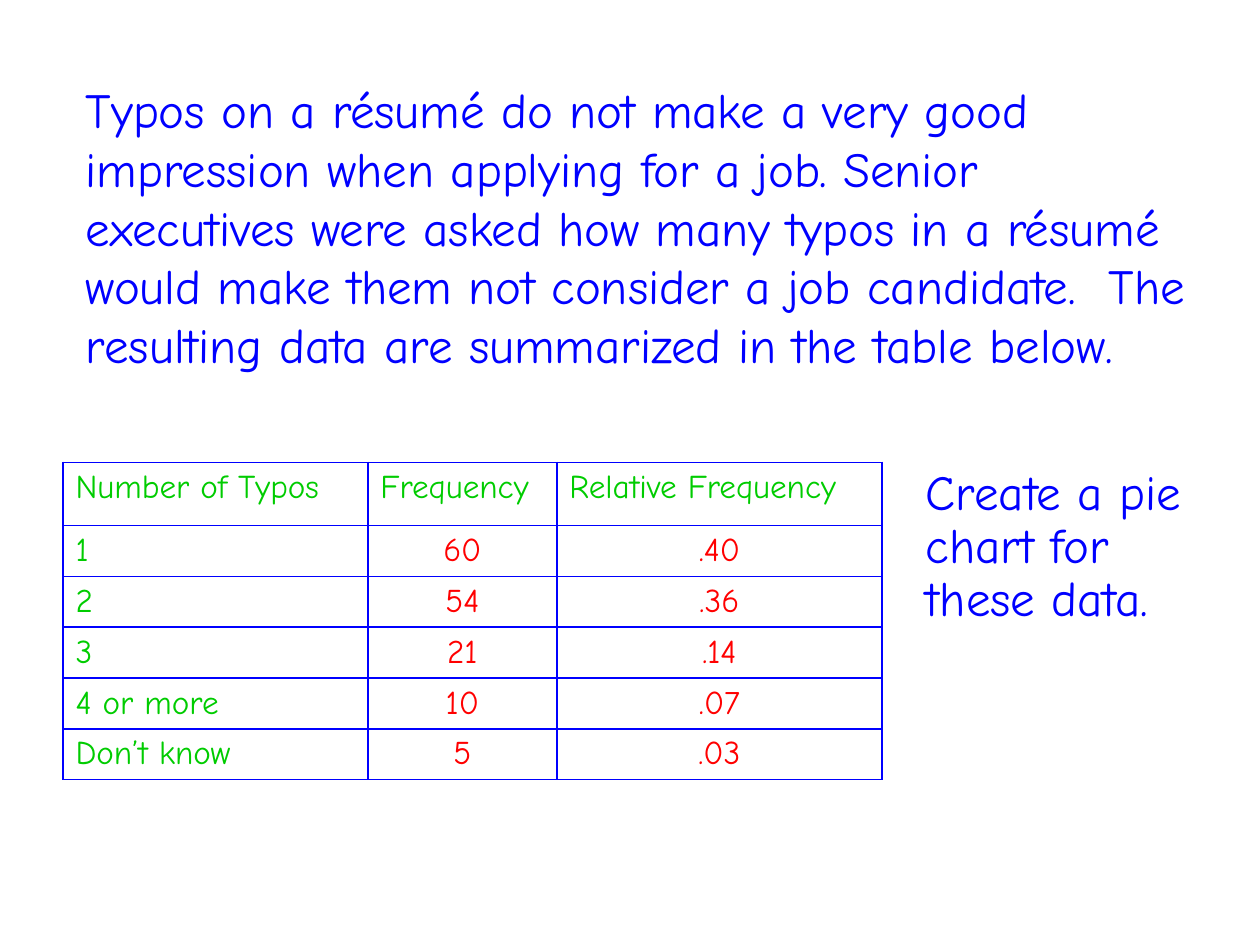
import pptx
import pptx.dml.color
import pptx.enum.text
import pptx.oxml
import pptx.oxml.ns
import pptx.util

Inches = pptx.util.Inches
Pt = pptx.util.Pt

THEME = {
    "font": "Comic Neue",
    "prose": "0000FF",
    "label": "00CC00",
    "value": "FF0000",
    "grid": "0000FF",
    "prose_size": 28,
    "table_size": 19,
}


def write(paragraph, text, size, color):
    run = paragraph.add_run()
    run.text = text
    run.font.name = THEME["font"]
    run.font.size = Pt(THEME[size])
    run.font.color.rgb = pptx.dml.color.RGBColor.from_string(THEME[color])
    paragraph.space_before = Pt(0)


def outline(cell):
    """Draw a one-point line on all four sides of a table cell."""
    properties = cell._tc.get_or_add_tcPr()
    for position, side in enumerate(("lnL", "lnR", "lnT", "lnB")):
        line = pptx.oxml.parse_xml(
            f'<a:{side} {pptx.oxml.ns.nsdecls("a")} w="{Pt(1)}"><a:solidFill>'
            f'<a:srgbClr val="{THEME["grid"]}"/></a:solidFill></a:{side}>'
        )
        properties.insert(position, line)


deck = pptx.Presentation()
deck.slide_width, deck.slide_height = Inches(10), Inches(7.5)
slide = deck.slides.add_slide(deck.slide_layouts[1])
empty_title = slide.shapes.title
empty_title.element.getparent().remove(empty_title.element)

# Problem statement
problem = slide.placeholders[1]
problem.left, problem.top = Inches(0.58), Inches(0.58)
problem.width, problem.height = Inches(9), Inches(2.92)
statement = problem.text_frame.paragraphs[0]
write(
    statement,
    "Typos on a résumé do not make a very good impression when applying for a job. "
    "Senior executives were asked how many typos in a résumé would make them not "
    "consider a job candidate.  The resulting data are summarized in the table below.",
    "prose_size",
    "prose",
)
statement_format = statement._p.get_or_add_pPr()
statement_format.set("marL", "0")
statement_format.set("indent", "0")
statement_format.append(
    pptx.oxml.parse_xml(f'<a:buNone {pptx.oxml.ns.nsdecls("a")}/>')
)

# Frequency table
typo_counts = [
    ("Number of Typos", "Frequency", "Relative Frequency"),
    ("1", "60", ".40"),
    ("2", "54", ".36"),
    ("3", "21", ".14"),
    ("4 or more", "10", ".07"),
    ("Don’t know", "5", ".03"),
]
frequencies = slide.shapes.add_table(
    len(typo_counts), 3, Inches(0.5), Inches(3.67), Inches(6.5), Inches(2.58)
).table
for column, width in zip(frequencies.columns, (2.42, 1.5, 2.58)):
    column.width = Inches(width)
for r, record in enumerate(typo_counts):
    frequencies.rows[r].height = Inches(0.32 if r else 0.5)
    for c, entry in enumerate(record):
        is_value = r > 0 and c > 0
        cell = frequencies.cell(r, c)
        cell.fill.background()
        outline(cell)
        paragraph = cell.text_frame.paragraphs[0]
        write(paragraph, entry, "table_size", "value" if is_value else "label")
        paragraph.runs[0].font.bold = False
        if is_value:
            paragraph.alignment = pptx.enum.text.PP_ALIGN.CENTER

# Task beside the table
task = slide.shapes.add_textbox(
    Inches(7.25), Inches(3.67), Inches(2.42), Inches(1.36)
).text_frame
task.word_wrap = True
task.auto_size = pptx.enum.text.MSO_AUTO_SIZE.SHAPE_TO_FIT_TEXT
instruction = task.paragraphs[0]
write(instruction, "Create a pie chart for these data.", "prose_size", "prose")
instruction.line_spacing = 0.9

deck.save("out.pptx")
